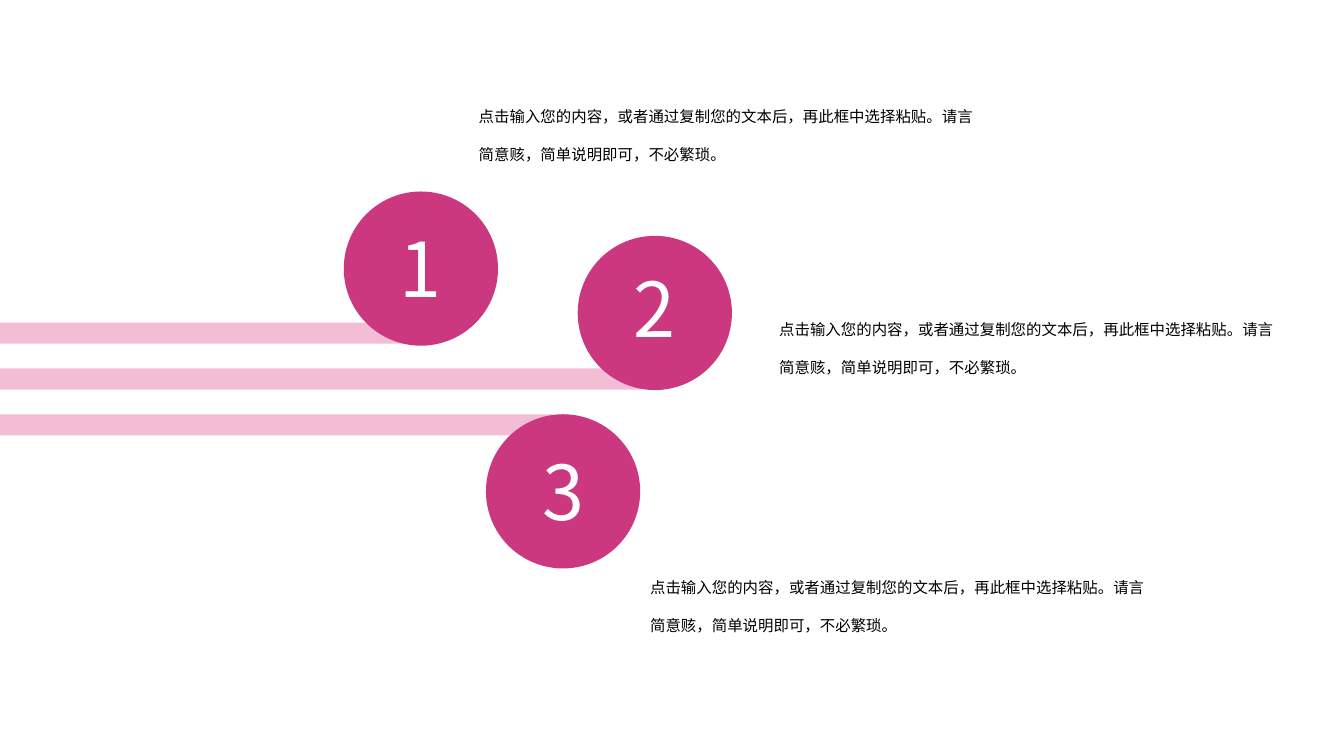
from lxml.etree import SubElement
from pptx import Presentation
from pptx.dml.color import RGBColor
from pptx.enum.shapes import MSO_SHAPE as Shape
from pptx.enum.text import MSO_ANCHOR as Anchor, PP_ALIGN as Align
from pptx.oxml.ns import qn
from pptx.util import Inches, Pt

FONT = "Noto Sans CJK SC"
BODY = "点击输入您的内容，或者通过复制您的文本后，再此框中选择粘贴。请言简意赅，简单说明即可，不必繁琐。"
PINK, MAGENTA = "F4BDD6", "CC3880"
BAR_TOP, BAR_STEP, BAR_HEIGHT = 3.2, 0.455, 0.21
DIAMETER = 1.53
NUMBER_WIDTH, NUMBER_HEIGHT = 0.76, 1.01

# Bar length, circle left and top, number top, text left and top
items = [
    (4.35, 3.41, 1.9, 2.19, 4.65, 0.82),
    (6.35, 5.73, 2.34, 2.58, 7.63, 2.93),
    (5.48, 4.82, 4.11, 4.4, 6.35, 5.49),
]


def add_filled(shapes, kind, left, top, width, height, color):
    shape = shapes.add_shape(kind, *map(Inches, (left, top, width, height)))
    shape.shadow.inherit = False
    shape.fill.solid()
    shape.fill.fore_color.rgb = RGBColor.from_string(color)
    shape.line.fill.background()


def add_text(left, top, width, height, text, size, color):
    box = page.shapes.add_textbox(*map(Inches, (left, top, width, height)))
    frame = box.text_frame
    frame.word_wrap = True
    frame.text = text
    span = frame.paragraphs[0].runs[0]
    span.font.size = Pt(size)
    span.font.color.rgb = RGBColor.from_string(color)
    span.font.name = FONT
    # East Asian characters take their own font entry
    SubElement(span.font._element, qn("a:ea"), typeface=FONT)
    return frame


deck = Presentation()
deck.slide_width, deck.slide_height = Inches(13.33), Inches(7.5)
page = deck.slides.add_slide(deck.slide_layouts[6])

# Bars running in from the left edge
bars = page.shapes.add_group_shape()
for row, (length, *_) in enumerate(items):
    add_filled(bars.shapes, Shape.RECTANGLE, 0, BAR_TOP + row * BAR_STEP,
               length, BAR_HEIGHT, PINK)

# Circles, each with its number and its text
for number, item in enumerate(items, start=1):
    _, left, top, number_top, text_left, text_top = item
    add_filled(page.shapes, Shape.OVAL, left, top, DIAMETER, DIAMETER, MAGENTA)

    frame = add_text(left + (DIAMETER - NUMBER_WIDTH) / 2, number_top,
                     NUMBER_WIDTH, NUMBER_HEIGHT, str(number), 54, "FFFFFF")
    frame.vertical_anchor = Anchor.MIDDLE
    frame.margin_top, frame.margin_bottom = 0, Inches(0.08)
    frame.paragraphs[0].alignment = Align.CENTER

    frame = add_text(text_left, text_top, 5.2, 0.96, BODY, 11, "000000")
    frame.paragraphs[0].line_spacing = 2.06

deck.save("out.pptx")
